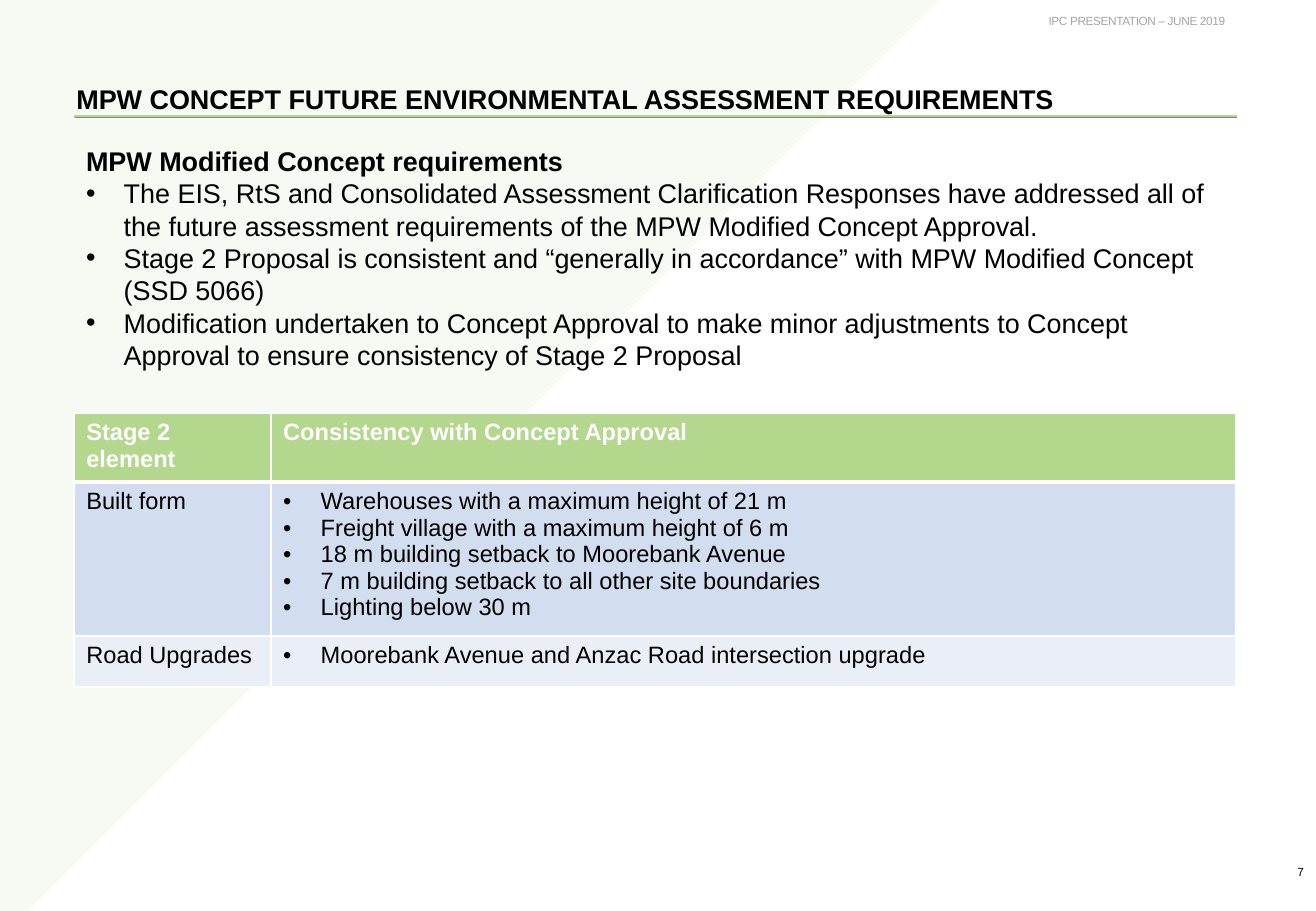
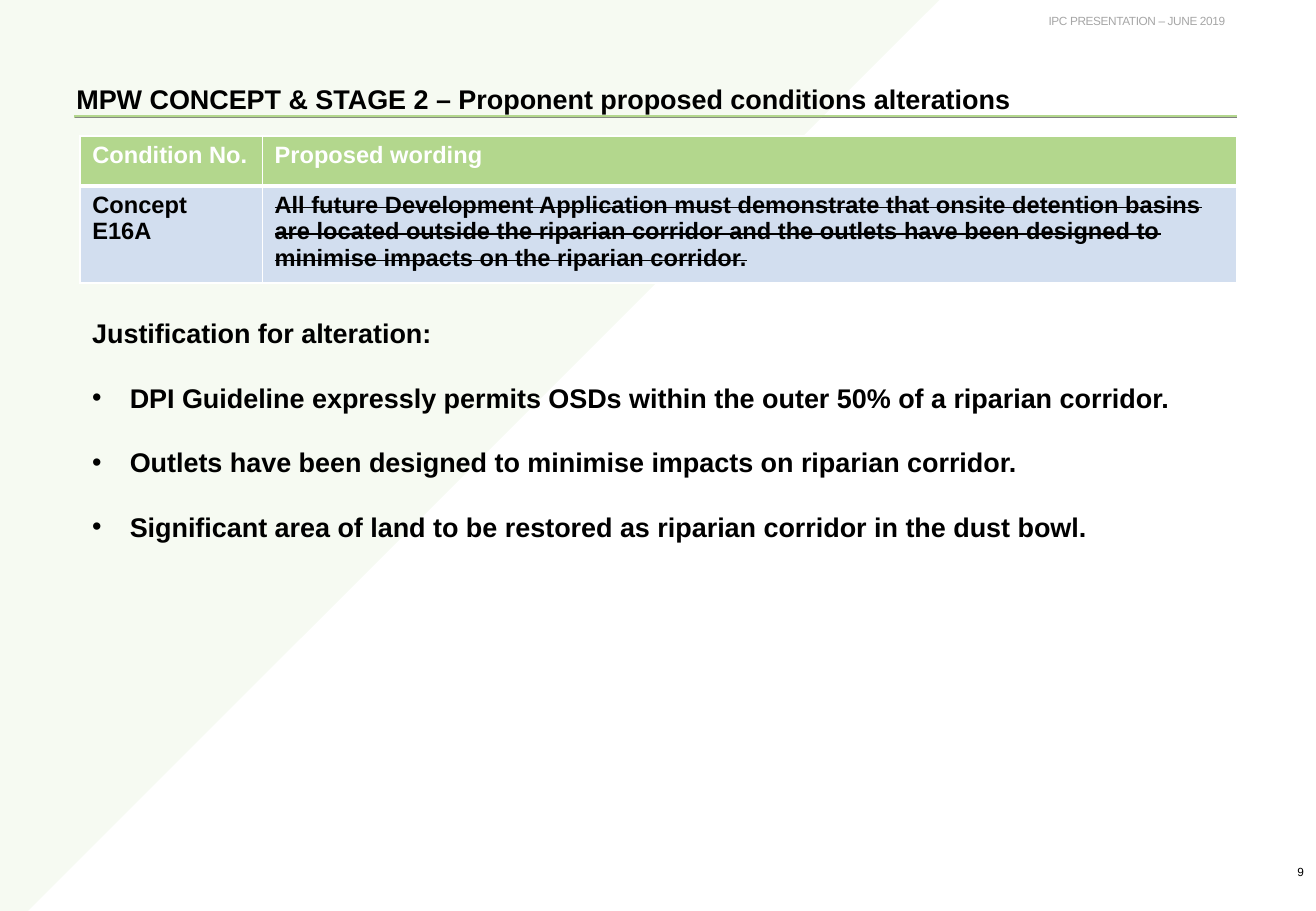
from dataclasses import dataclass

from lxml import etree
from pptx import Presentation
from pptx import util as u
from pptx.dml.color import RGBColor
from pptx.enum import shapes, text
from pptx.oxml import ns

GREEN, WHITE, BLACK = "B3D78D", "FFFFFF", "000000"
GREY, RULE_GREY = "A6A6A6", "808080"
BAND_DARK, BAND_LIGHT = "D2DEEF", "EAEFF7"
FONT = "Arial"
BODY_PT, TABLE_PT, SMALL_PT = 16, 14, 7
HANG = u.Inches(0.31)
RIGHT, MIDDLE = text.PP_ALIGN.RIGHT, text.MSO_ANCHOR.MIDDLE


@dataclass
class Para:
    text: str
    bullet: bool = False
    bold: bool = False
    strike: bool = False
    before: float = 0


@dataclass
class Box:
    left: float
    top: float
    width: float
    height: float

    def inches(self) -> tuple:
        return tuple(u.Inches(v) for v in (self.left, self.top, self.width, self.height))


@dataclass
class Grid:
    left: float
    top: float
    cols: list[float]
    heights: list[float]
    rows: list[list[list[Para]]]


def rgb(value: str) -> RGBColor:
    return RGBColor.from_string(value)


def sub(parent, tag: str, **attrs: str):
    return etree.SubElement(parent, ns.qn(tag), **attrs)


# Text
def write(tf, paras: list[Para], size: float, colour: str = BLACK, align=None) -> None:
    for i, item in enumerate(paras):
        p = tf.paragraphs[0] if i == 0 else tf.add_paragraph()
        if item.bullet:
            pPr = p._p.get_or_add_pPr()
            pPr.set("marL", str(HANG))
            pPr.set("indent", str(-HANG))
            sub(pPr, "a:buFont", typeface=FONT)
            sub(pPr, "a:buChar", char="•")
        p.text = item.text
        if align is not None:
            p.alignment = align
        if item.before:
            p.space_before = u.Pt(item.before)
        for r in p.runs:
            r.font.name, r.font.size, r.font.bold = FONT, u.Pt(size), item.bold
            r.font.color.rgb = rgb(colour)
            if item.strike:
                r.font._element.set("strike", "sngStrike")


def add_text(s, box: Box, paras: list[Para], size: float = BODY_PT,
             colour: str = BLACK, align=None, anchor=None):
    tf = s.shapes.add_textbox(*box.inches()).text_frame
    tf.word_wrap = True
    if anchor is not None:
        tf.vertical_anchor = anchor
    write(tf, paras, size, colour, align)
    return tf


# Parts shared by every slide
def add_rule(s, left: float, y: float, colour: str, width: float) -> None:
    line = s.shapes.add_connector(shapes.MSO_CONNECTOR.STRAIGHT, u.Inches(left),
                                  u.Inches(y), u.Inches(10.18), u.Inches(y))
    line.line.color.rgb = rgb(colour)
    line.line.width = u.Pt(width)
    sub(line._element.spPr, "a:effectLst")


def add_slide(prs, title: str, number: int):
    s = prs.slides.add_slide(prs.slide_layouts[6])
    add_rule(s, 0.61, 0.96, GREEN, 1.75)
    add_rule(s, 0.62, 0.97, RULE_GREY, 0.5)

    corner = s.shapes.add_shape(shapes.MSO_SHAPE.RIGHT_TRIANGLE,
                                *Box(0, -0.37, 8.1, 8.1).inches())
    corner.rotation = 90
    corner.shadow.inherit = False
    corner.line.fill.background()
    corner.fill.solid()
    corner.fill.fore_color.rgb = rgb(GREEN)
    sub(corner._element.spPr.find(".//" + ns.qn("a:srgbClr")), "a:alpha", val="11000")

    tf = add_text(s, Box(7.23, 0.06, 2.95, 0.22), [Para("IPC PRESENTATION – JUNE 2019")],
                  SMALL_PT, GREY, RIGHT)
    tf.paragraphs[0].runs[0].font._element.set("spc", "-20")
    add_text(s, Box(10.06, 7.12, 0.77, 0.12), [Para(str(number))],
             SMALL_PT, align=RIGHT, anchor=MIDDLE)
    add_text(s, Box(0.53, 0.63, 9.65, 0.51), [Para(title, bold=True)])
    return s


# Table
def set_borders(cell, top: float, bottom: float) -> None:
    tcPr = cell._tc.get_or_add_tcPr()
    for side, width in (("L", 1), ("R", 1), ("T", top), ("B", bottom)):
        ln = sub(tcPr, f"a:ln{side}", w=str(u.Pt(width)))
        sub(sub(ln, "a:solidFill"), "a:srgbClr", val=WHITE)


def add_grid(s, grid: Grid) -> None:
    box = Box(grid.left, grid.top, sum(grid.cols), sum(grid.heights))
    table = s.shapes.add_table(len(grid.rows), len(grid.cols), *box.inches()).table
    table.horz_banding = False
    for col, width in zip(table.columns, grid.cols):
        col.width = u.Inches(width)
    for i, (row, height) in enumerate(zip(grid.rows, grid.heights)):
        table.rows[i].height = u.Inches(height)
        fill = GREEN if i == 0 else (BAND_DARK if i % 2 else BAND_LIGHT)
        for j, paras in enumerate(row):
            cell = table.cell(i, j)
            set_borders(cell, top=3 if i == 1 else 1, bottom=3 if i == 0 else 1)
            cell.fill.solid()
            cell.fill.fore_color.rgb = rgb(fill)
            write(cell.text_frame, paras, TABLE_PT, WHITE if i == 0 else BLACK)


def bullets(*lines: str, bold: bool = False, before: float = 0) -> list[Para]:
    return [Para(line, bullet=True, bold=bold, before=before) for line in lines]


def bold(*lines: str) -> list[Para]:
    return [Para(line, bold=True) for line in lines]


# Slides
def requirements_slide(prs) -> None:
    s = add_slide(prs, "MPW CONCEPT FUTURE ENVIRONMENTAL ASSESSMENT REQUIREMENTS", 7)
    add_text(s, Box(0.61, 1.14, 9.45, 1.99), bold("MPW Modified Concept requirements") + bullets(
        "The EIS, RtS and Consolidated Assessment Clarification Responses have addressed all of "
        "the future assessment requirements of the MPW Modified Concept Approval.",
        "Stage 2 Proposal is consistent and “generally in accordance” with MPW Modified Concept "
        "(SSD 5066)",
        "Modification undertaken to Concept Approval to make minor adjustments to Concept "
        "Approval to ensure consistency of Stage 2 Proposal"))
    add_grid(s, Grid(0.61, 3.4, [1.62, 7.94], [0.57, 1.26, 0.42], [
        [bold("Stage 2 element"), bold("Consistency with Concept Approval")],
        [[Para("Built form")], bullets(
            "Warehouses with a maximum height of 21 m",
            "Freight village with a maximum height of 6 m",
            "18 m building setback to Moorebank Avenue",
            "7 m building setback to all other site boundaries",
            "Lighting below 30 m")],
        [[Para("Road Upgrades")],
         bullets("Moorebank Avenue and Anzac Road intersection upgrade")],
    ]))


def alterations_slide(prs) -> None:
    s = add_slide(prs, "MPW CONCEPT & STAGE 2 – Proponent proposed conditions alterations", 9)
    removed = Para(
        "All future Development Application must demonstrate that onsite detention basins "
        "are located outside the riparian corridor and the outlets have been designed to "
        "minimise impacts on the riparian corridor.", bold=True, strike=True)
    add_grid(s, Grid(0.66, 1.12, [1.5, 8.02], [0.41, 0.8], [
        [bold("Condition No."), bold("Proposed wording")],
        [bold("Concept", "E16A"), [removed]],
    ]))
    add_text(s, Box(0.66, 2.56, 9.52, 1.66), bold("Justification for alteration:") + bullets(
        "DPI Guideline expressly permits OSDs within the outer 50% of a riparian corridor.",
        "Outlets have been designed to minimise impacts on riparian corridor.",
        "Significant area of land to be restored as riparian corridor in the dust bowl.",
        bold=True, before=19))


def main() -> None:
    prs = Presentation()
    prs.slide_width, prs.slide_height = u.Inches(10.83), u.Inches(7.5)
    requirements_slide(prs)
    alterations_slide(prs)
    prs.save("out.pptx")


if __name__ == "__main__":
    main()
